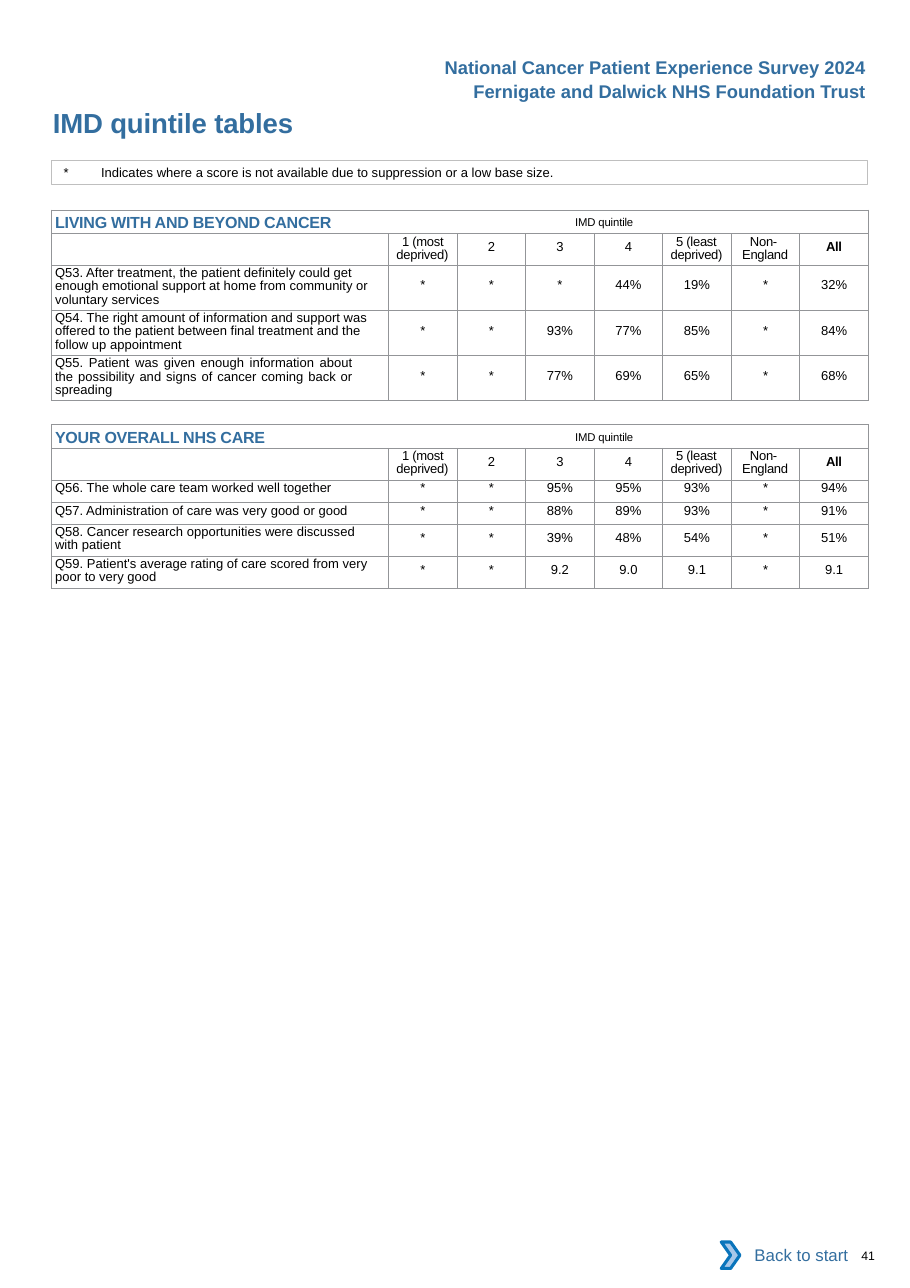
from lxml.etree import SubElement
from pptx import Presentation
from pptx.dml.color import RGBColor
from pptx.enum.shapes import MSO_SHAPE as SHAPE
from pptx.enum.text import MSO_ANCHOR as ANCHOR, MSO_AUTO_SIZE as AUTO, PP_ALIGN as ALIGN
from pptx.oxml.ns import qn
from pptx.util import Cm, Pt

BLUE, BLACK, GREY = "336E9F", "000000", "939598"
LEFT, WIDTH = 1.19, 18.81
LABEL_W, VALUE_W = 7.77, 1.58

# Run formats
BODY = dict(size=8.5, color=BLACK)
BOLD = dict(BODY, bold=True, spc=-20)
TIGHT = dict(BODY, spc=-20)
BANNER = dict(size=12, color=BLUE, bold=True)
TITLE = dict(size=18, color=BLUE, bold=True, spc=-10)
SECTION = dict(size=10.5, color=BLUE, bold=True, spc=-15)
RAISED = dict(size=12.8, color=BLACK, baseline=10000, spc=-10)

# Column heads: text, run format, and left and first-line indent if it wraps
HEADS = [("1 (most deprived)", TIGHT, (0.18, 0.13)), ("2", BODY, None),
         ("3", BODY, None), ("4", BODY, None),
         ("5 (least deprived)", TIGHT, (0.18, 0.13)),
         ("Non- England", TIGHT, (0.25, 0.18)), ("All", BOLD, None)]

# Lines in the question: row height, label inset, label space, value inset, value space
ROW_KINDS = {1: (0.51, 0.03, 1.1, 0.03, 1.1),
             2: (0.74, 0.05, 1.6, 0.15, 4.2),
             3: (1.04, 0.05, 1.6, 0.3, 8.6)}

LIVING = [
    (3, "Q53. After treatment, the patient definitely could get enough emotional "
        "support at home from community or voluntary services", "* * * 44% 19% * 32%"),
    (3, "Q54. The right amount of information and support was offered to the patient "
        "between final treatment and the follow up appointment", "* * 93% 77% 85% * 84%"),
    (3, "Q55. Patient was given enough information about the possibility and signs of "
        "cancer coming back or spreading", "* * 77% 69% 65% * 68%"),
]
OVERALL = [
    (1, "Q56. The whole care team worked well together", "* * 95% 95% 93% * 94%"),
    (1, "Q57. Administration of care was very good or good", "* * 88% 89% 93% * 91%"),
    (2, "Q58. Cancer research opportunities were discussed with patient",
     "* * 39% 48% 54% * 51%"),
    (2, "Q59. Patient's average rating of care scored from very poor to very good",
     "* * 9.2 9.0 9.1 * 9.1"),
]
JUSTIFIED = "Q55"


def rgb(color):
    return RGBColor.from_string(color)


def add_run(p, text, fmt):
    r = p.add_run()
    r.text = text
    r.font.name = "Arial"
    r.font.size = Pt(fmt["size"])
    r.font.color.rgb = rgb(fmt["color"])
    r.font.bold = fmt.get("bold", False)
    for name in ("spc", "baseline"):
        if name in fmt:
            r._r.get_or_add_rPr().set(name, str(fmt[name]))


def write(tf, runs, indent=(0, 0), right=0, tab=None, **fmt):
    """Fill the first paragraph; indent is left and first line."""
    p = tf.paragraphs[0]
    for name, value in fmt.items():
        setattr(p, name, value)
    pPr = p._p.get_or_add_pPr()
    for name, value in zip(("marL", "indent", "marR"), (*indent, right)):
        if value:
            pPr.set(name, str(Cm(value)))
    if tab:
        tabs = SubElement(pPr, qn("a:tabLst"))
        SubElement(tabs, qn("a:tab"), pos=str(Cm(tab)), algn="l")
    for text, run_fmt in runs:
        add_run(p, text, run_fmt)


def set_margins(box, margins):
    for side, value in zip(("left", "top", "right", "bottom"), margins):
        setattr(box, f"margin_{side}", Cm(value))


def add_text(slide, box, runs, margins=(0, 0, 0, 0), wrap=True, **fmt):
    tf = slide.shapes.add_textbox(*map(Cm, box)).text_frame
    tf.word_wrap, tf.auto_size = wrap, AUTO.SHAPE_TO_FIT_TEXT
    set_margins(tf, margins)
    write(tf, runs, **fmt)


def add_shape(shapes, kind, box, fill=None, line=None, width=0.5):
    sp = shapes.add_shape(kind, *map(Cm, box))
    sp.shadow.inherit = False
    if fill:
        sp.fill.solid()
        sp.fill.fore_color.rgb = rgb(fill)
    else:
        sp.fill.background()
    if line:
        sp.line.color.rgb = rgb(line)
        sp.line.width = Pt(width)
    else:
        sp.line.fill.background()
    return sp


def style_cell(cell):
    """Grey rules on all sides, no fill, no margins, small text height."""
    tcPr = cell._tc.get_or_add_tcPr()
    for side in "LRTB":
        ln = SubElement(tcPr, qn(f"a:ln{side}"), w=str(Pt(0.5)))
        SubElement(SubElement(ln, qn("a:solidFill")), qn("a:srgbClr"), val=GREY)
    cell.fill.background()
    set_margins(cell, (0, 0, 0, 0))
    SubElement(cell.text_frame.paragraphs[0]._p, qn("a:endParaRPr"), sz="850")


def fill_cell(cell, runs, top=0, **fmt):
    cell.margin_top = Cm(top)
    write(cell.text_frame, runs, **fmt)


def add_score_table(slide, top, section, questions):
    heights = [0.53, 0.73] + [ROW_KINDS[lines][0] for lines, _, _ in questions]
    frame = slide.shapes.add_table(len(heights), len(HEADS) + 1, Cm(LEFT), Cm(top),
                                   Cm(WIDTH), Cm(sum(heights)))
    table = frame.table
    table.first_row = table.horz_banding = False
    for row, height in zip(table.rows, heights):
        row.height = Cm(height)
    for i, col in enumerate(table.columns):
        col.width = Cm(VALUE_W if i else LABEL_W)
    for cell in table.iter_cells():
        style_cell(cell)

    # Section row
    head = table.cell(0, 0)
    head.merge(table.cell(0, len(HEADS)))
    head.vertical_anchor = ANCHOR.MIDDLE
    fill_cell(head, [(section + "\t", SECTION), ("IMD quintile", RAISED)],
              indent=(0.08, 0), tab=11.99, space_before=Pt(0.5))

    # Column heads
    for c, (text, run_fmt, indent) in enumerate(HEADS, 1):
        if indent:
            fill_cell(table.cell(1, c), [(text, run_fmt)], top=0.05, indent=indent,
                      line_spacing=Pt(8.6), space_before=Pt(1.3))
        else:
            fill_cell(table.cell(1, c), [(text, run_fmt)], top=0.15,
                      alignment=ALIGN.CENTER, space_before=Pt(4))

    # Questions and scores
    for row, (lines, question, scores) in enumerate(questions, 2):
        _, label_top, label_space, value_top, value_space = ROW_KINDS[lines]
        fmt = dict(space_before=Pt(label_space), right=0.38)
        if lines > 1:
            fmt["line_spacing"] = Pt(8.6)
        if question.startswith(JUSTIFIED):
            fmt.update(alignment=ALIGN.JUSTIFY, right=0.83)
        fill_cell(table.cell(row, 0), [(question, BODY)], top=label_top,
                  indent=(0.08, 0), **fmt)
        for c, score in enumerate(scores.split(), 1):
            fill_cell(table.cell(row, c), [(score, BODY)], top=value_top,
                      alignment=ALIGN.CENTER, space_before=Pt(value_space))


def add_note(slide):
    sp = add_shape(slide.shapes, SHAPE.RECTANGLE, (LEFT, 3.7, WIDTH, 0.56), line="BFBFBF")
    tf = sp.text_frame
    tf.word_wrap, tf.auto_size, tf.vertical_anchor = True, AUTO.SHAPE_TO_FIT_TEXT, ANCHOR.TOP
    set_margins(tf, (0, 0.1, 0, 0.1))
    note = "*\tIndicates where a score is not available due to suppression or a low base size."
    write(tf, [(note, BODY)], indent=(0.28, 0), tab=0.86,
          alignment=ALIGN.LEFT, space_before=Pt(9.1))


def add_back_button(slide):
    group = slide.shapes.add_group_shape()
    sp = add_shape(group.shapes, SHAPE.RECTANGLE, (16.81, 28.4, 3, 1.07), fill="FFFFFF")
    sp.text_frame.vertical_anchor = ANCHOR.MIDDLE
    write(sp.text_frame, [("Back to start", dict(size=11, color=BLUE))],
          alignment=ALIGN.RIGHT)
    add_shape(group.shapes, SHAPE.CHEVRON, (16.63, 28.63, 0.43, 0.61),
              fill="A8C7E9", line="0A74BB", width=2)


def main():
    prs = Presentation()
    prs.slide_width, prs.slide_height = Cm(20.98), Cm(29.69)
    slide = prs.slides.add_slide(prs.slide_layouts[6])

    # Page number and title
    add_text(slide, (19.61, 28.77, 1.3, 0.33), [("41", dict(size=8, color=BLACK))],
             indent=(0.25, 0), space_before=Pt(0.2))
    add_text(slide, (LEFT, 2.44, 11.43, 0.76), [("IMD quintile tables", TITLE)],
             indent=(0.03, 0), space_before=Pt(4.1))

    # Score tables
    add_score_table(slide, 4.84, "LIVING WITH AND BEYOND CANCER", LIVING)
    add_score_table(slide, 9.79, "YOUR OVERALL NHS CARE", OVERALL)

    # Survey and trust names
    for left, top, width, text in (
            (10.57, 1.73, 9.65, "Fernigate and Dalwick NHS Foundation Trust"),
            (9.96, 1.16, 10.26, "National Cancer Patient Experience Survey 2024")):
        add_text(slide, (left, top, width, 0.76), [(text, BANNER)],
                 margins=(0.25, 0.13, 0.25, 0.13), wrap=False, alignment=ALIGN.RIGHT)

    add_note(slide)
    add_back_button(slide)
    prs.save("out.pptx")


if __name__ == "__main__":
    main()
